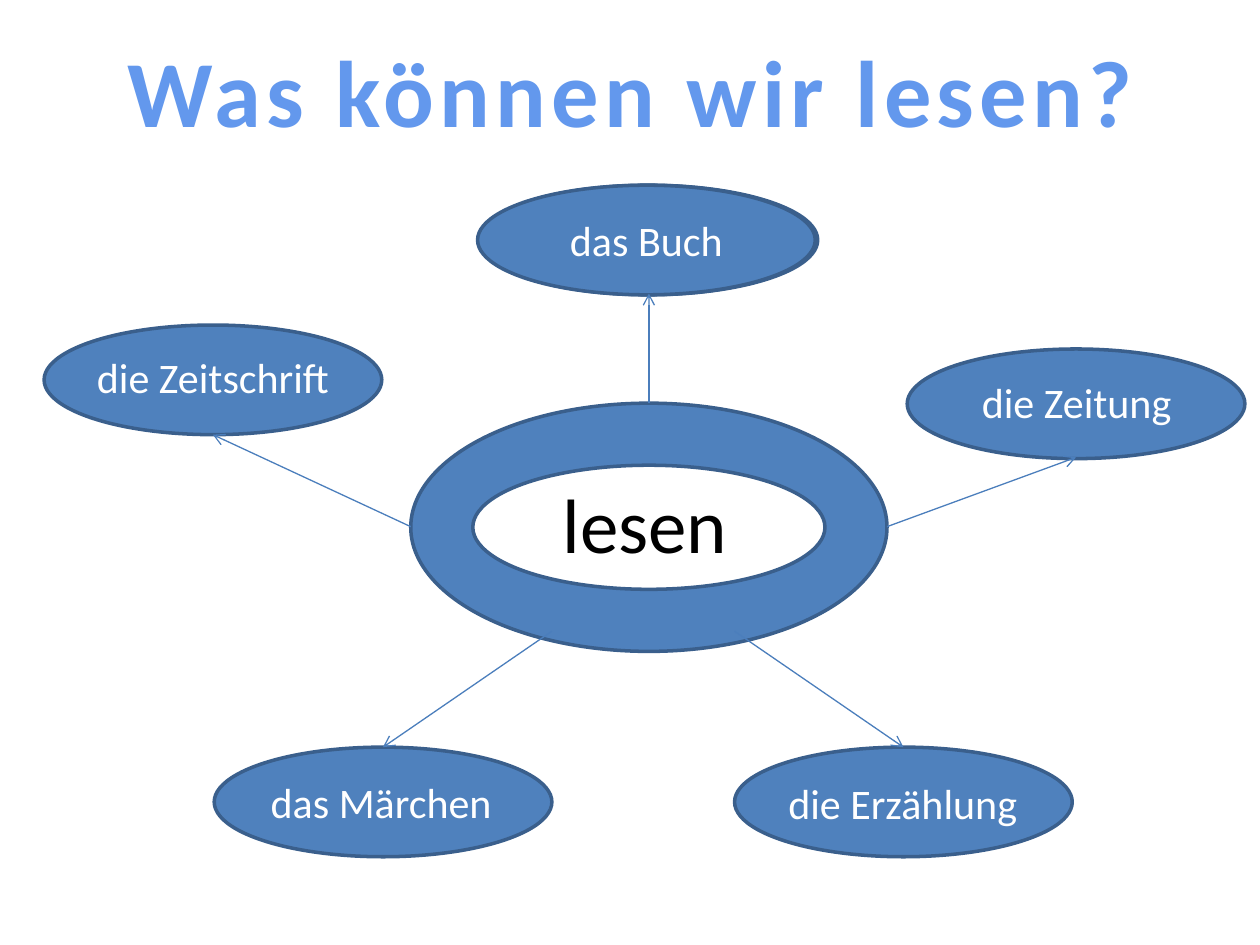
"""Build a mind map slide of things to read in German."""
from lxml import etree
from pptx import Presentation
from pptx.dml.color import RGBColor
from pptx.enum import shapes, text
from pptx.oxml import parse_xml
from pptx.oxml.ns import nsdecls, qn
from pptx.util import Inches, Pt

BLUE = RGBColor(0x4F, 0x81, 0xBD)
DARK_BLUE = RGBColor(0x3A, 0x5F, 0x8C)
ARROW_BLUE = RGBColor(0x4B, 0x7E, 0xBC)
TITLE_BLUE = RGBColor(0x63, 0x98, 0xED)
WHITE = RGBColor(0xFF, 0xFF, 0xFF)
BLACK = RGBColor(0, 0, 0)
OVAL_WIDTH, OVAL_HEIGHT = 2.68, 0.87

presentation = Presentation()
presentation.slide_width = Inches(10)
presentation.slide_height = Inches(7.5)
slide = presentation.slides.add_slide(presentation.slide_layouts[6])


def add_blue_shape(kind, left, top, width, height):
    shape = slide.shapes.add_shape(kind, Inches(left), Inches(top), Inches(width), Inches(height))
    shape.shadow.inherit = False
    shape.fill.solid()
    shape.fill.fore_color.rgb = BLUE
    shape.line.color.rgb = DARK_BLUE
    shape.line.width = Pt(2)
    return shape


def add_text(words, left, top, width, height, color, font_format, frame_format):
    box = slide.shapes.add_textbox(Inches(left), Inches(top), Inches(width), Inches(height))
    for name, value in frame_format.items():
        setattr(box.text_frame, name, value)
    paragraph = box.text_frame.paragraphs[0]
    paragraph.alignment = text.PP_ALIGN.CENTER
    run = paragraph.add_run()
    run.text = words
    run.font.color.rgb = color
    for name, value in {"name": "Calibri", **font_format}.items():
        setattr(run.font, name, value)
    return run


center = add_blue_shape(shapes.MSO_SHAPE.DONUT, 3.26, 3.2, 3.78, 1.97)
add_text("lesen", 3.74, 3.52, 2.76, 1.25, BLACK, {"size": Pt(44)},
         {"word_wrap": True, "vertical_anchor": text.MSO_ANCHOR.MIDDLE})

ovals = {}
for name, left, top in [
    ("Buch back", 3.81, 1.47),
    ("Buch", 3.79, 1.47),
    ("Zeitung", 7.2, 2.77),
    ("Zeitschrift", 0.35, 2.58),
    ("Märchen", 1.7, 5.93),
    ("Erzählung", 5.83, 5.93),
]:
    ovals[name] = add_blue_shape(shapes.MSO_SHAPE.OVAL, left, top, OVAL_WIDTH, OVAL_HEIGHT)

arrows = {}
for name, start_x, start_y, end_x, end_y in [
    ("Buch", 5.15, 3.2, 5.15, 2.33),
    ("Zeitung", 7.04, 4.18, 8.54, 3.63),
    ("Zeitschrift", 3.26, 4.18, 1.69, 3.45),
    ("Märchen", 4.38, 5.01, 3.04, 5.93),
    ("Erzählung", 5.83, 5.01, 7.17, 5.93),
]:
    arrow = slide.shapes.add_connector(
        shapes.MSO_CONNECTOR.STRAIGHT, Inches(start_x), Inches(start_y), Inches(end_x), Inches(end_y))
    arrow.line.color.rgb = ARROW_BLUE
    arrow.line.width = Pt(0.75)
    etree.SubElement(arrow.line._get_or_add_ln(), qn("a:tailEnd"), type="arrow")
    etree.SubElement(arrow._element.spPr, qn("a:effectLst"))
    arrows[name] = arrow

arrows["Buch"].begin_connect(center, 0)
for name in ("Märchen", "Erzählung"):
    arrows[name].end_connect(ovals[name], 0)

label_frame = {"word_wrap": True, "auto_size": text.MSO_AUTO_SIZE.SHAPE_TO_FIT_TEXT}
for words, left, top, width in [
    ("das Buch", 4.12, 1.65, 2.02),
    ("die Zeitschrift", 0.59, 2.74, 2.2),
    ("die Zeitung", 7.13, 2.94, 2.83),
    ("das Märchen", 1.68, 6.11, 2.69),
    ("die Erzählung", 5.71, 6.12, 2.91),
]:
    add_text(words, left, top, width, 0.5, WHITE, {"size": Pt(24)}, label_frame)

title = add_text("Was können wir lesen?", 0.85, 0.21, 8.31, 1.01, TITLE_BLUE,
                 {"size": Pt(54), "bold": True}, {**label_frame, "word_wrap": False})
title_properties = title._r.get_or_add_rPr()
title_properties.set("spc", "300")
title_properties.insert(0, parse_xml(
    f'<a:ln {nsdecls("a")} w="11430"><a:solidFill><a:srgbClr val="F4F6F9"/></a:solidFill></a:ln>'))
title_properties.insert(2, parse_xml(
    f'<a:effectLst {nsdecls("a")}><a:outerShdw blurRad="25400" dist="25400" dir="2700000">'
    '<a:srgbClr val="9FCBFF"/></a:outerShdw></a:effectLst>'))

presentation.save("out.pptx")
